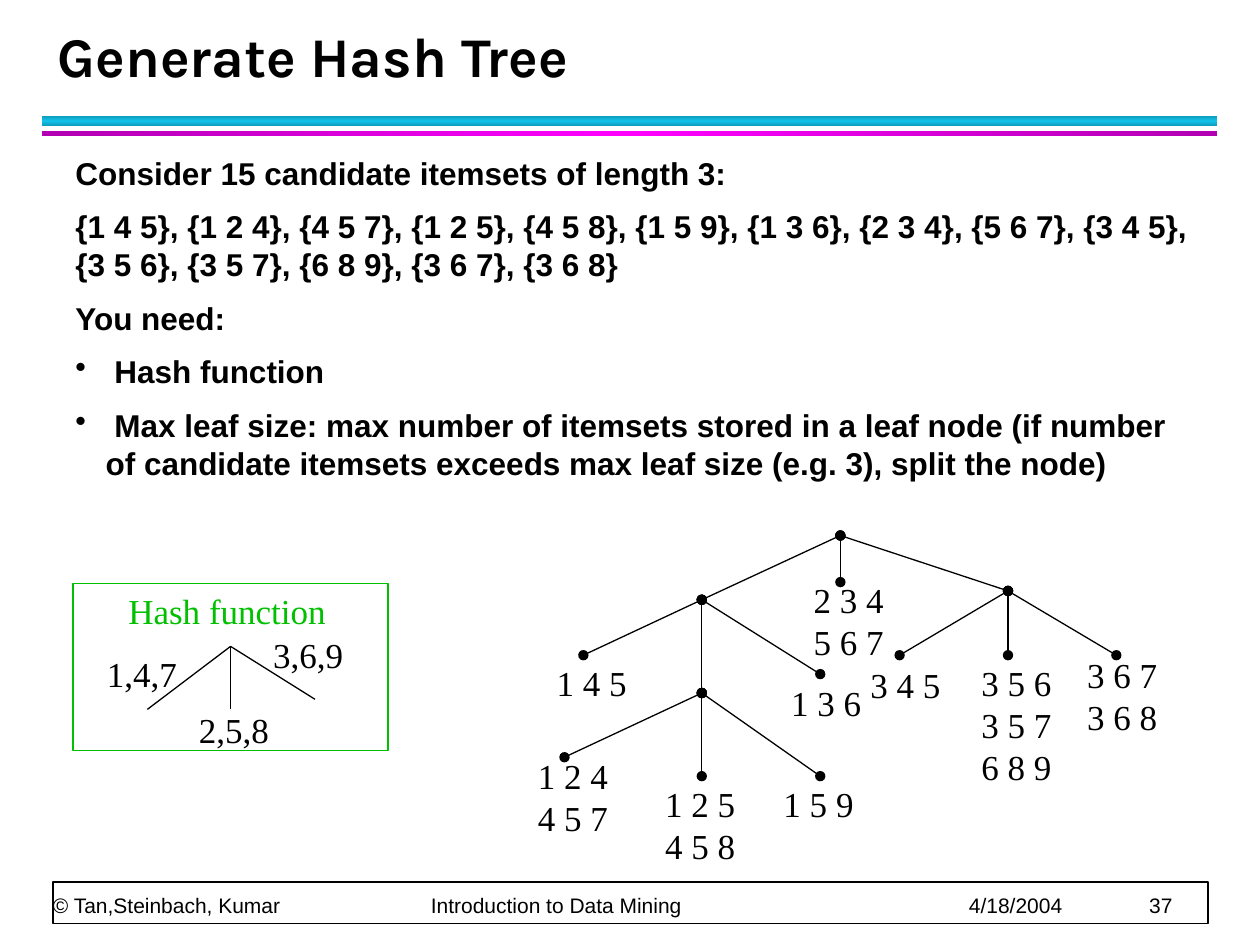
from copy import deepcopy

from pptx import Presentation
from pptx import util as u
from pptx.dml.color import RGBColor
from pptx.enum import shapes, text
from pptx.oxml import xmlchemy
from pptx.oxml.ns import qn

Inches = u.Inches

BLACK = RGBColor(0, 0, 0)
WHITE = RGBColor(255, 255, 255)
GREEN = RGBColor(0x00, 0xC0, 0x00)
CYAN = RGBColor(0x12, 0xC2, 0xE9)
DARK_CYAN = RGBColor(0x0E, 0x9B, 0xBA)
MAGENTA = RGBColor(0xFF, 0x00, 0xFF)
DARK_MAGENTA = RGBColor(0xB2, 0x00, 0xB2)

SERIF = "Times New Roman"
SANS = "Arial"

ROOT, LEFT, RIGHT, MIDDLE = (6.67, 4.25), (5.57, 4.76), (8, 4.69), (5.57, 5.5)
# Each branch: parent node, child node
INNER_BRANCHES = [(ROOT, LEFT), (ROOT, RIGHT), (LEFT, MIDDLE)]
# Each leaf: parent node, leaf node, left and top of its label, itemsets
LEAVES = [
    (ROOT, (6.67, 4.62), (6.36, 4.54), ["2 3 4", "5 6 7"]),
    (LEFT, (4.63, 5.2), (4.32, 5.2), ["1 4 5"]),
    (LEFT, (6.51, 5.35), (6.18, 5.36), ["1 3 6"]),
    (MIDDLE, (4.48, 6.01), (4.17, 5.94), ["1 2 4", "4 5 7"]),
    (MIDDLE, (5.57, 6.16), (5.18, 6.16), ["1 2 5", "4 5 8"]),
    (MIDDLE, (6.51, 6.16), (6.12, 6.16), ["1 5 9"]),
    (RIGHT, (7.14, 5.2), (6.81, 5.22), ["3 4 5"]),
    (RIGHT, (8, 5.2), (7.69, 5.2), ["3 5 6", "3 5 7", "6 8 9"]),
    (RIGHT, (8.86, 5.2), (8.53, 5.14), ["3 6 7", "3 6 8"]),
]

HASH_APEX = (1.83, 5.13)
# Each bucket: end of its branch, left and top of its label, values
BUCKETS = [
    ((1.17, 5.63), (0.75, 5.13), "1,4,7"),
    ((1.83, 5.63), (1.48, 5.57), "2,5,8"),
    ((2.5, 5.55), (2.07, 4.98), "3,6,9"),
]

BODY = [
    "Consider 15 candidate itemsets of length 3:",
    "{1 4 5}, {1 2 4}, {4 5 7}, {1 2 5}, {4 5 8}, {1 5 9}, {1 3 6}, {2 3 4}, "
    "{5 6 7}, {3 4 5}, {3 5 6}, {3 5 7}, {6 8 9}, {3 6 7}, {3 6 8}",
    "You need:",
    "• Hash function",
    "• Max leaf size: max number of itemsets stored in a leaf node (if number "
    "of candidate itemsets exceeds max leaf size (e.g. 3), split the node)",
]


def add_child(parent, tag, **attributes):
    child = xmlchemy.OxmlElement(tag)
    for name, value in attributes.items():
        child.set(name, str(value))
    parent.append(child)
    return child


def write(frame, lines, size=20, font=SERIF, color=BLACK, bold=False,
          before=0, spacing=None, tabs=()):
    """Fill a text frame; a line that starts with • becomes a bullet."""
    for index, line in enumerate(lines):
        paragraph = frame.add_paragraph() if index else frame.paragraphs[0]
        paragraph.alignment = text.PP_ALIGN.LEFT
        paragraph.space_before = u.Pt(before)
        if spacing:
            paragraph.line_spacing = u.Pt(spacing)
        properties = paragraph._p.get_or_add_pPr()
        if line.startswith("•"):
            properties.set("marL", str(Inches(0.24)))
            properties.set("indent", str(-Inches(0.24)))
            add_child(properties, "a:buFontTx")
            add_child(properties, "a:buChar", char="•")
            line = line[1:]
        if tabs:
            stops = add_child(properties, "a:tabLst")
            for stop in tabs:
                add_child(stops, "a:tab", pos=Inches(stop), algn="l")
        run = paragraph.add_run()
        run.text = line
        run.font.size = u.Pt(size)
        run.font.name = font
        run.font.bold = bold
        run.font.color.rgb = color


class Board:
    def __init__(self, slide, line_width=0.75):
        self.slide = slide
        self.line_width = u.Pt(line_width)

    def rectangle(self, left, top, width, height, line=None, fill=None, weight=None):
        shape = self.slide.shapes.add_shape(
            shapes.MSO_SHAPE.RECTANGLE,
            Inches(left), Inches(top), Inches(width), Inches(height))
        shape.shadow.inherit = False
        if fill is None:
            shape.fill.background()
        else:
            shape.fill.solid()
            shape.fill.fore_color.rgb = fill
        if line is None:
            shape.line.fill.background()
        else:
            shape.line.color.rgb = line
            shape.line.width = weight or self.line_width
        return shape

    def gradient_bar(self, top, height, edge, center, angle):
        fill = self.rectangle(0.33, top, 9.33, height).fill
        fill.gradient()
        fill.gradient_angle = angle
        bar = self.slide.shapes[-1]
        stop_list = bar._element.spPr.find(qn("a:gradFill")).find(qn("a:gsLst"))
        stop_list.append(deepcopy(stop_list[0]))
        for stop, position, color in zip(
                fill.gradient_stops, (0, 0.5, 1), (edge, center, edge)):
            stop.position = position
            stop.color.rgb = color

    def line(self, start, end, dots=False):
        connector = self.slide.shapes.add_connector(
            shapes.MSO_CONNECTOR.STRAIGHT, *map(Inches, start + end))
        connector.line.color.rgb = BLACK
        connector.line.width = self.line_width
        if dots:
            outline = connector.line._get_or_add_ln()
            add_child(outline, "a:headEnd", type="oval")
            add_child(outline, "a:tailEnd", type="oval")
        add_child(connector._element.spPr, "a:effectLst")

    def text_box(self, left, top, width, height, lines, wrap=True,
                 anchor=text.MSO_ANCHOR.TOP, inset=True, **style):
        box = self.slide.shapes.add_textbox(
            Inches(left), Inches(top), Inches(width), Inches(height))
        frame = box.text_frame
        frame.word_wrap = wrap
        frame.vertical_anchor = anchor
        if not inset:
            frame.margin_left = frame.margin_right = 0
            frame.margin_top = frame.margin_bottom = 0
        write(frame, lines, **style)

    def label(self, position, lines, width=0.76, **style):
        height = 0.1 + len(lines) / 3
        self.text_box(*position, width, height, lines, wrap=False, **style)


def main():
    presentation = Presentation()
    presentation.slide_width = Inches(10)
    presentation.slide_height = Inches(7.5)
    board = Board(presentation.slides.add_slide(presentation.slide_layouts[6]))

    board.gradient_bar(0.92, 0.08, DARK_CYAN, CYAN, 90)
    board.gradient_bar(1.04, 0.04, DARK_MAGENTA, MAGENTA, 0)
    board.rectangle(0.42, 7, 9.17, 0.33, line=BLACK, fill=WHITE, weight=u.Pt(1))
    board.text_box(
        0.42, 7, 9.15, 0.28,
        ["© Tan,Steinbach, Kumar\tIntroduction to Data Mining\t4/18/2004\t37"],
        anchor=text.MSO_ANCHOR.BOTTOM, inset=False,
        size=12, font=SANS, spacing=20, tabs=(3, 7.27, 8.7))
    board.text_box(0.36, 0.17, 9.06, 0.58, ["Generate Hash Tree"],
                   anchor=text.MSO_ANCHOR.BOTTOM,
                   size=32, font="Karla", bold=True, spacing=36)

    for parent, child in INNER_BRANCHES:
        board.line(parent, child, dots=True)
    for parent, leaf, position, itemsets in LEAVES:
        board.line(parent, leaf, dots=True)
        board.label(position, itemsets)

    for end, position, values in BUCKETS:
        board.line(HASH_APEX, end)
        board.label(position, [values])
    board.label((0.92, 4.63), ["Hash function"], width=1.77, color=GREEN)
    board.rectangle(0.58, 4.63, 2.5, 1.33, line=GREEN)

    board.text_box(0.5, 1.17, 9.08, 2.81, BODY,
                   size=18, font=SANS, bold=True, before=9)

    presentation.save("out.pptx")


if __name__ == "__main__":
    main()
